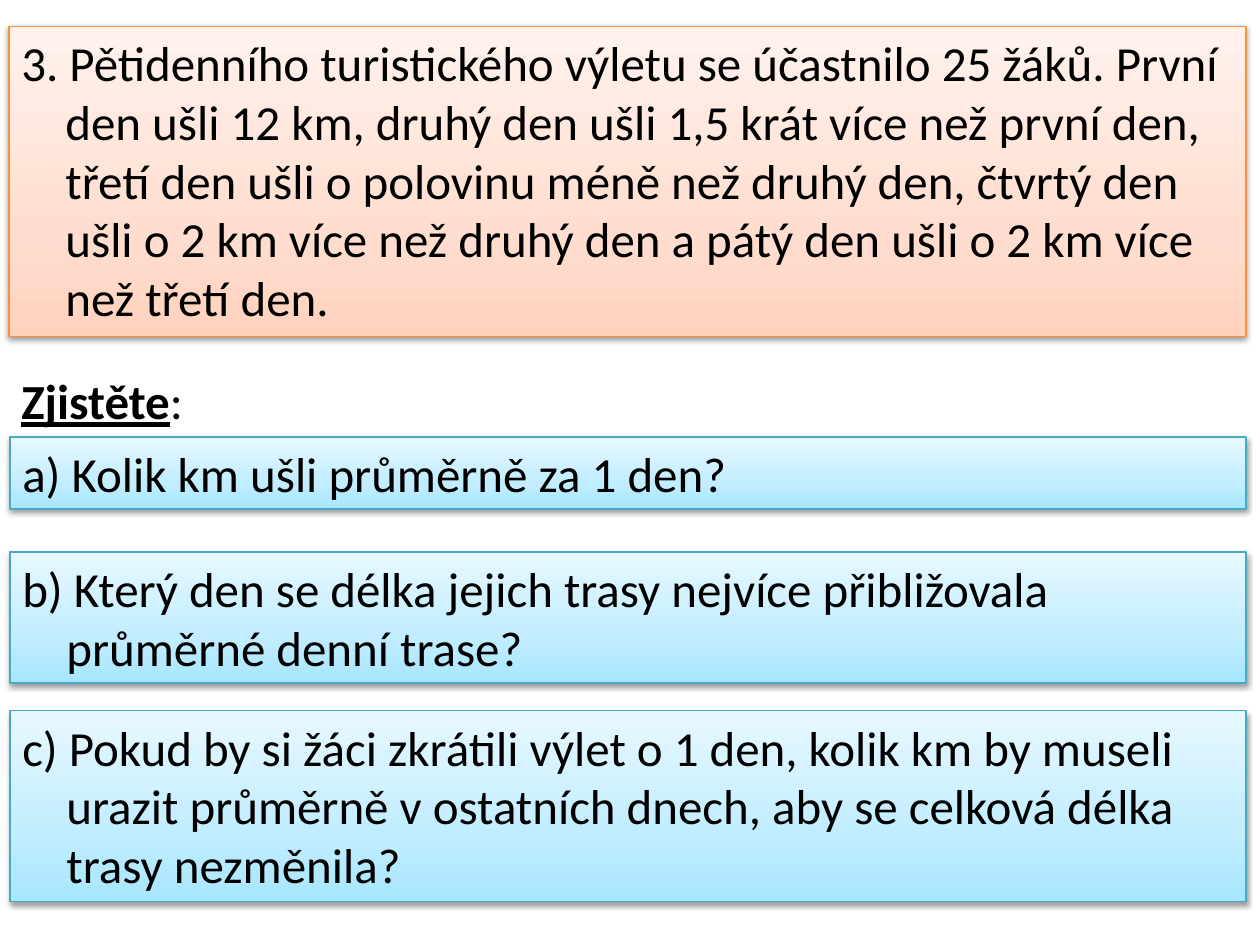
"""Build a slide with a word problem about a school hiking trip."""
from lxml.etree import SubElement
from pptx import Presentation
from pptx.dml.color import RGBColor
from pptx.enum.shapes import MSO_SHAPE
from pptx.enum.text import MSO_ANCHOR, MSO_AUTO_SIZE, PP_ALIGN
from pptx.oxml.ns import qn
from pptx.util import Cm, Pt

COLORS = {"text": "000000", "shadow": "000000", "orange line": "F69240", "blue line": "46AAC5"}
GRADIENTS = {
    "orange": {0: "FFD2BD", 35: "FFDED0", 100: "FFF2ED"},
    "blue": {0: "A7E6FF", 35: "C1EDFF", 100: "E7F8FF"},
}
FONT_FORMAT = {"name": "Calibri", "size": Pt(28), "bold": False, "underline": False}
FRAME_FORMAT = {
    "word_wrap": True,
    "vertical_anchor": MSO_ANCHOR.TOP,
    "auto_size": MSO_AUTO_SIZE.SHAPE_TO_FIT_TEXT,
}
CONTINUATION_INDENT = Cm(0.89)

PANELS = [
    ("orange", 0.18, 0.53, 24.94, 6.25, [
        "3. Pětidenního turistického výletu se účastnilo 25 žáků. První",
        "den ušli 12 km, druhý den ušli 1,5 krát více než první den,",
        "třetí den ušli o polovinu méně než druhý den, čtvrtý den",
        "ušli o 2 km více než druhý den a pátý den ušli o 2 km více",
        "než třetí den.",
    ]),
    ("blue", 0.2, 8.81, 24.92, 1.45, ["a) Kolik km ušli průměrně za 1 den?"]),
    ("blue", 0.2, 11.13, 24.92, 2.64, [
        "b) Který den se délka jejich trasy nejvíce přibližovala",
        "průměrné denní trase?",
    ]),
    ("blue", 0.2, 14.33, 24.92, 3.84, [
        "c) Pokud by si žáci zkrátili výlet o 1 den, kolik km by museli",
        "urazit průměrně v ostatních dnech, aby se celková délka",
        "trasy nezměnila?",
    ]),
]


def add_text(paragraph, text, **changes):
    run = paragraph.add_run()
    run.text = text
    for name, value in {**FONT_FORMAT, **changes}.items():
        setattr(run.font, name, value)
    run.font.color.rgb = RGBColor.from_string(COLORS["text"])


def style_panel(shape, theme):
    shape.fill.gradient()
    shape.fill.gradient_angle = 90
    stops = shape._element.spPr.find(qn("a:gradFill")).find(qn("a:gsLst"))
    for stop in list(stops):
        stops.remove(stop)
    for position, color in GRADIENTS[theme].items():
        stop = SubElement(stops, qn("a:gs"), pos=str(position * 1000))
        SubElement(stop, qn("a:srgbClr"), val=color)
    shape.line.color.rgb = RGBColor.from_string(COLORS[f"{theme} line"])
    shape.line.width = Pt(0.75)
    shape.shadow.inherit = False
    effects = shape._element.spPr.find(qn("a:effectLst"))
    shadow = SubElement(effects, qn("a:outerShdw"), blurRad=str(Pt(3.1)),
                        dist=str(Pt(1.6)), dir="5400000", rotWithShape="0")
    shadow_color = SubElement(shadow, qn("a:srgbClr"), val=COLORS["shadow"])
    SubElement(shadow_color, qn("a:alpha"), val="38000")


presentation = Presentation()
presentation.slide_width = Cm(25.4)
presentation.slide_height = Cm(19.05)
slide = presentation.slides.add_slide(presentation.slide_layouts[6])

for theme, left, top, width, height, lines in PANELS:
    shape = slide.shapes.add_shape(MSO_SHAPE.RECTANGLE, Cm(left), Cm(top), Cm(width), Cm(height))
    style_panel(shape, theme)
    for name, value in FRAME_FORMAT.items():
        setattr(shape.text_frame, name, value)
    for index, line in enumerate(lines):
        paragraph = shape.text_frame.add_paragraph() if index else shape.text_frame.paragraphs[0]
        paragraph.alignment = PP_ALIGN.LEFT
        if index:
            paragraph._p.get_or_add_pPr().set("marL", str(CONTINUATION_INDENT))
        add_text(paragraph, line)

heading = slide.shapes.add_textbox(Cm(0.18), Cm(7.34), Cm(3.81), Cm(1.45))
for name, value in {**FRAME_FORMAT, "word_wrap": False}.items():
    setattr(heading.text_frame, name, value)
paragraph = heading.text_frame.paragraphs[0]
add_text(paragraph, "Zjistěte", bold=True, underline=True)
add_text(paragraph, ":")

presentation.save("out.pptx")
